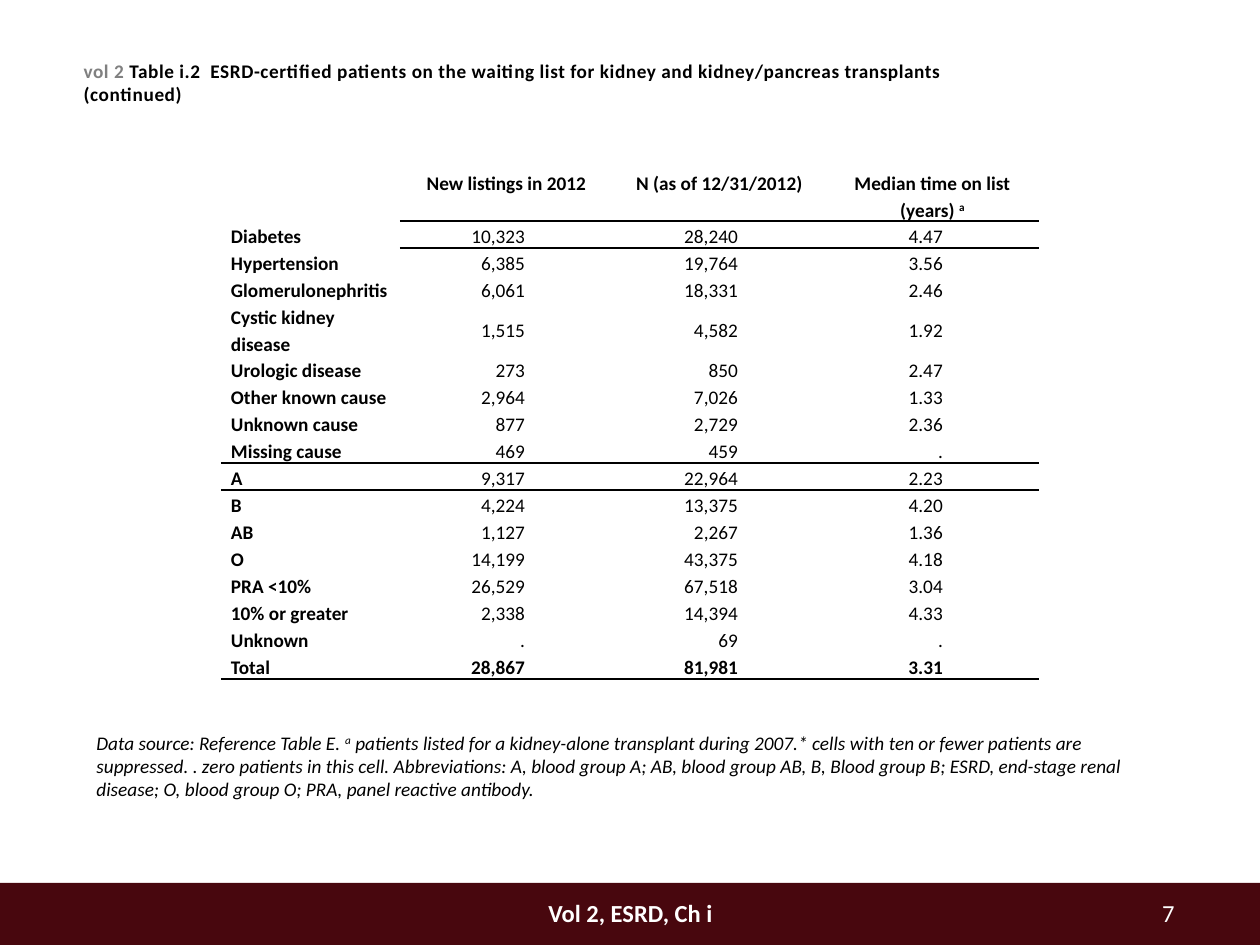
import copy

import lxml.etree
import pptx
import pptx.dml.color
import pptx.enum.shapes
import pptx.enum.text
import pptx.oxml.ns
import pptx.util

RGB = pptx.dml.color.RGBColor
ALIGN = pptx.enum.text.PP_ALIGN
ANCHOR = pptx.enum.text.MSO_ANCHOR
BLACK = RGB(0, 0, 0)
GRAY = RGB(0x80, 0x80, 0x80)
WHITE = RGB(0xFF, 0xFF, 0xFF)
MAROON = RGB(0x48, 0x07, 0x0E)
SCALE = 914400 / 126  # EMU in one px
PLAIN = "{2D5ABB26-0587-4C30-8999-92F81FD0307C}"  # table with no style, no grid
qn = pptx.oxml.ns.qn


def px(n):
    return pptx.util.Emu(round(n * SCALE))


def write(para, text, font="Calibri", size=11, color=BLACK, bold=False,
          slant=False, base=0, space=0):
    """Add text to a paragraph; a newline becomes a line break."""
    for i, line in enumerate(text.split("\n")):
        if i:
            para.add_line_break()
        run = para.add_run()
        run.text = line
        f = run.font
        f.name, f.size, f.bold, f.italic = font, pptx.util.Pt(size), bold, slant
        f.color.rgb = color
        props = run._r.get_or_add_rPr()
        if base:
            props.set("baseline", str(base * 1000))
        if space:
            props.set("spc", str(space))
        if i:  # the break takes the size of its line
            run._r.getprevious().append(copy.deepcopy(props))


class Deck:
    def __init__(self, wide, high):
        self.prs = pptx.Presentation()
        self.prs.slide_width, self.prs.slide_height = px(wide), px(high)
        self.slide = self.prs.slides.add_slide(self.prs.slide_layouts[5])

    def fill(self, frame, parts, align=ALIGN.LEFT, **style):
        """Write (text, format) parts into the first paragraph."""
        frame.word_wrap = True
        para = frame.paragraphs[0]
        para.alignment = align
        for text, extra in parts:
            write(para, text, **{**style, **extra})
        return para

    def title(self, box, parts, **style):
        shape = self.slide.shapes.title
        shape.left, shape.top, shape.width, shape.height = map(px, box)
        shape.text_frame.vertical_anchor = ANCHOR.TOP
        self.fill(shape.text_frame, parts, **style)

    def text(self, box, parts, **style):
        shape = self.slide.shapes.add_textbox(*map(px, box))
        self.fill(shape.text_frame, parts, **style)

    def bar(self, box, color):
        kind = pptx.enum.shapes.MSO_SHAPE.RECTANGLE
        shape = self.slide.shapes.add_shape(kind, *map(px, box))
        shape.shadow.inherit = False
        shape.fill.solid()
        shape.fill.fore_color.rgb = color
        shape.line.fill.background()

    def table(self, left, top, cols, rows):
        frame = self.slide.shapes.add_table(
            len(rows), len(cols), px(left), px(top), px(sum(cols)), px(sum(rows)))
        grid = frame.table
        grid.first_row = grid.horz_banding = False
        grid._tbl.tblPr.find(qn("a:tableStyleId")).text = PLAIN
        for col, wide in zip(grid.columns, cols):
            col.width = px(wide)
        for row, high in zip(grid.rows, rows):
            row.height = px(high)
        return grid

    def cell(self, cell, parts, pads, anchor=ANCHOR.MIDDLE, **style):
        cell.fill.background()
        cell.vertical_anchor = anchor
        cell.margin_left, cell.margin_right = map(px, pads)
        cell.margin_top = cell.margin_bottom = 0
        para = self.fill(cell.text_frame, parts, **style)
        para.line_spacing = 1.15
        if not parts:
            para.font.size = pptx.util.Pt(11)

    def rule(self, cell, side):
        """Draw a 1 pt line on side T or B of a cell."""
        line = lxml.etree.Element(qn("a:ln" + side), w="12700")
        paint = lxml.etree.SubElement(line, qn("a:solidFill"))
        lxml.etree.SubElement(paint, qn("a:srgbClr"), val=str(BLACK))
        cell._tc.get_or_add_tcPr().insert(0, line)


HEADS = [
    [],
    [("New listings in 2012", {})],
    [("N (as of 12/31/2012)", {})],
    [("Median time on list (years) ", {}), ("a", {"base": 30})],
]
ROWS = [
    ("Diabetes", "10,323", "28,240", "4.47"),
    ("Hypertension", "6,385", "19,764", "3.56"),
    ("Glomerulonephritis", "6,061", "18,331", "2.46"),
    ("Cystic kidney disease", "1,515", "4,582", "1.92"),
    ("Urologic disease", "273", "850", "2.47"),
    ("Other known cause", "2,964", "7,026", "1.33"),
    ("Unknown cause", "877", "2,729", "2.36"),
    ("Missing cause", "469", "459", "."),
    ("A", "9,317", "22,964", "2.23"),
    ("B", "4,224", "13,375", "4.20"),
    ("AB", "1,127", "2,267", "1.36"),
    ("O", "14,199", "43,375", "4.18"),
    ("PRA <10%", "26,529", "67,518", "3.04"),
    ("10% or greater", "2,338", "14,394", "4.33"),
    ("Unknown", ".", "69", "."),
    ("Total", "28,867", "81,981", "3.31"),
]
PADS = [(10, 10), (11, 88), (11, 88), (11, 96)]
TALL = "Cystic kidney disease"  # the label that takes two lines
ENDS = ("Missing cause", "Total")  # rows with a line below


def main():
    deck = Deck(1260, 945)

    # Footer band
    deck.bar((0, 883, 1260, 62), MAROON)
    deck.text((494, 892, 273, 42), [("Vol 2, ESRD, Ch i", {})],
              align=ALIGN.CENTER, size=14, color=WHITE, bold=True)
    deck.text((1061, 892, 126, 38), [("7", {})],
              align=ALIGN.RIGHT, size=14, color=WHITE)

    # Title
    deck.title((71, 53, 1119, 73), [
        ("vol 2", {"color": GRAY}),
        (" Table i.2  ESRD-certified patients on the waiting list for kidney "
         "and kidney/pancreas transplants \n(continued)", {}),
    ], bold=True, space=30)

    # Table
    highs = [53] + [52 if row[0] == TALL else 27 for row in ROWS]
    grid = deck.table(221, 168, [179, 213, 213, 213], highs)
    for c, parts in enumerate(HEADS):
        cell = grid.cell(0, c)
        deck.cell(cell, parts, (10, 10), ANCHOR.TOP, align=ALIGN.CENTER, bold=True)
        if parts:
            deck.rule(cell, "B")
    for r, row in enumerate(ROWS, 1):
        for c, value in enumerate(row):
            cell = grid.cell(r, c)
            deck.cell(cell, [(value, {})], PADS[c],
                      align=ALIGN.RIGHT if c else ALIGN.LEFT,
                      bold=c == 0 or row[0] == "Total")
            if row[0] in ENDS:
                deck.rule(cell, "B")
            if r == 1 and c or r > 1 and ROWS[r - 2][0] in ENDS:
                deck.rule(cell, "T")

    # Source note
    deck.text((84, 725, 1092, 83), [
        ("Data source: Reference Table E. ", {}),
        ("a", {"base": 30}),
        (" patients listed for a kidney-alone transplant during 2007.* cells "
         "with ten or fewer patients are suppressed. . zero patients in this "
         "cell. Abbreviations: A, blood group A; AB, blood group AB, B, Blood "
         "group B; ESRD, end-stage renal disease; O, blood group O; PRA, panel "
         "reactive antibody.", {}),
    ], slant=True)

    deck.prs.save("out.pptx")


if __name__ == "__main__":
    main()
